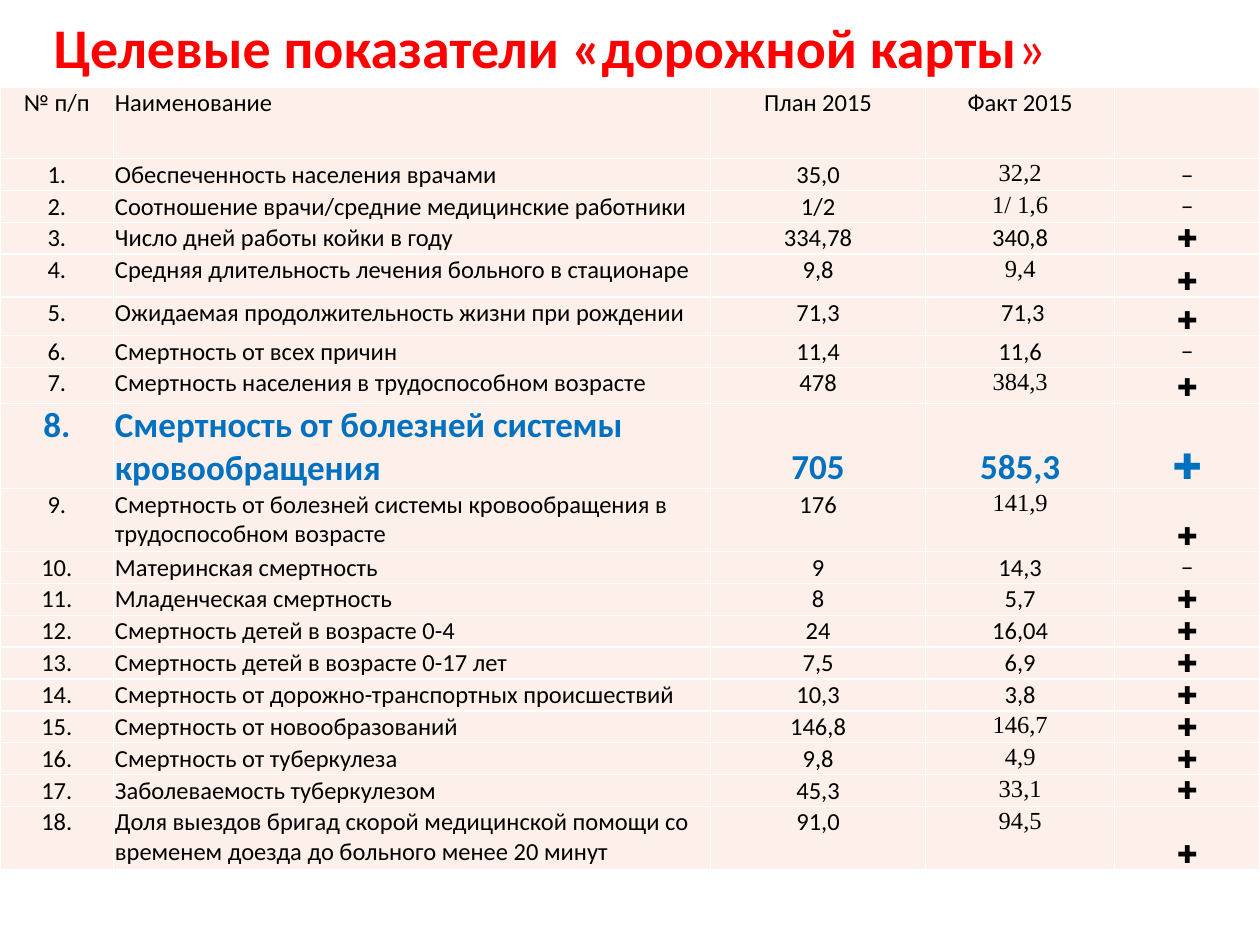
"""Build the slide with the road map target table."""
from dataclasses import dataclass

from lxml.etree import SubElement as Sub
from pptx import Presentation as Deck
from pptx.dml.color import RGBColor as Rgb
from pptx.enum.text import MSO_ANCHOR as Anchor, MSO_AUTO_SIZE as Fit, PP_ALIGN as Align
from pptx.oxml.ns import qn
from pptx.util import Pt


@dataclass(frozen=True)
class Theme:
    sans: str = "Calibri"
    serif: str = "Times New Roman"
    title: str = "FF0000"
    ink: str = "000000"
    key: str = "0070C0"
    fill: str = "FDEFE9"
    rule: str = "FFFFFF"
    head: int = 32
    body: int = 14
    large: int = 20


HEAD = ("№ п/п", "Наименование", "План 2015", "Факт 2015", "")
ROWS = (
    ("Обеспеченность населения врачами", "35,0", "32,2", "−"),
    ("Соотношение врачи/средние медицинские работники", "1/2", "1/ 1,6", "−"),
    ("Число дней работы койки в году", "334,78", "340,8", "✚"),
    ("Средняя длительность лечения больного в стационаре", "9,8", "9,4", "✚"),
    ("Ожидаемая продолжительность жизни при рождении", "71,3", " 71,3", "✚"),
    ("Смертность от всех причин", "11,4", "11,6", "−"),
    ("Смертность населения в трудоспособном возрасте", "478", "384,3", "✚"),
    ("Смертность от болезней системы кровообращения", "705", "585,3", "✚"),
    ("Смертность от болезней системы кровообращения в трудоспособном возрасте",
     "176", "141,9", "✚"),
    ("Материнская смертность", "9", "14,3", "−"),
    ("Младенческая смертность", "8", "5,7", "✚"),
    ("Смертность детей в возрасте 0-4", "24", "16,04", "✚"),
    ("Смертность детей в возрасте 0-17 лет", "7,5", "6,9", "✚"),
    ("Смертность от дорожно-транспортных происшествий", "10,3", "3,8", "✚"),
    ("Смертность от новообразований", "146,8", "146,7", "✚"),
    ("Смертность от туберкулеза", "9,8", "4,9", "✚"),
    ("Заболеваемость туберкулезом", "45,3", "33,1", "✚"),
    ("Доля выездов бригад скорой медицинской помощи со временем доезда "
     "до больного менее 20 минут", "91,0", "94,5", "✚"),
)
WIDTHS = (65, 341, 123, 108, 83)
ROW = 18.2
TALL = {0: 41, 4: 24.5, 5: 22, 7: 20.5, 8: 48.5, 9: 36, 18: 36.5}
SERIF = {1, 2, 4, 7, 9, 15, 16, 17, 18}
KEY = 8
NAME, FACT, SIGN = 1, 3, 4


class Page:
    def __init__(self, deck, theme):
        self.theme = theme
        self.slide = deck.slides.add_slide(deck.slide_layouts[5])

    def run(self, para, text, size, color, bold=False, face=None):
        run = para.add_run()
        run.text = text
        font = run.font
        font.name = face or self.theme.sans
        font.size, font.bold = Pt(size), bold
        font.color.rgb = Rgb.from_string(color)

    def title(self, box, parts):
        shape = self.slide.shapes.title
        shape.left, shape.top, shape.width, shape.height = map(Pt, box)
        frame = shape.text_frame
        frame.word_wrap, frame.auto_size = True, Fit.SHAPE_TO_FIT_TEXT
        frame.vertical_anchor = Anchor.TOP
        para = frame.paragraphs[0]
        para.alignment = Align.LEFT
        for text, bold in parts:
            self.run(para, text, self.theme.head, self.theme.title, bold)

    def edge(self, cell):
        props = cell._tc.get_or_add_tcPr()
        for side in "LRTB":
            line = Sub(props, qn("a:ln" + side), w=str(Pt(1)))
            Sub(Sub(line, qn("a:solidFill")), qn("a:srgbClr"), val=self.theme.rule)

    def cell(self, cell, text, row, col):
        look = self.theme
        key = row == KEY
        cell.margin_left = cell.margin_right = cell.margin_top = Pt(0.7)
        cell.margin_bottom = Pt(0)
        low = row and col == SIGN or key and col > NAME
        cell.vertical_anchor = Anchor.BOTTOM if low else Anchor.TOP
        self.edge(cell)
        cell.fill.solid()
        cell.fill.fore_color.rgb = Rgb.from_string(look.fill)
        if not text:
            return
        para = cell.text_frame.paragraphs[0]
        para.alignment = Align.LEFT if col == NAME else Align.CENTER
        face = look.serif if col == FACT and row in SERIF else look.sans
        self.run(para, text, look.large if key else look.body,
                 look.key if key else look.ink, key, face)

    def table(self, left, top, rows):
        highs = [TALL.get(i, ROW) for i in range(len(rows))]
        size = (left, top, sum(WIDTHS), sum(highs))
        grid = self.slide.shapes.add_table(len(rows), len(WIDTHS), *map(Pt, size)).table
        grid.first_row = grid.horz_banding = False
        for col, wide in zip(grid.columns, WIDTHS):
            col.width = Pt(wide)
        for i, (high, texts) in enumerate(zip(highs, rows)):
            grid.rows[i].height = Pt(high)
            for j, text in enumerate(texts):
                self.cell(grid.cell(i, j), text, i, j)


def main():
    deck = Deck()
    deck.slide_width, deck.slide_height = Pt(720), Pt(540)
    page = Page(deck, Theme())
    page.title((23.5, 3.6, 617, 46), (("Целевые показатели «дорожной карты", True), ("»", False)))
    rows = [(f"{i}.", *row) for i, row in enumerate(ROWS, 1)]
    page.table(0, 49.7, [HEAD, *rows])
    deck.save("out.pptx")


if __name__ == "__main__":
    main()
